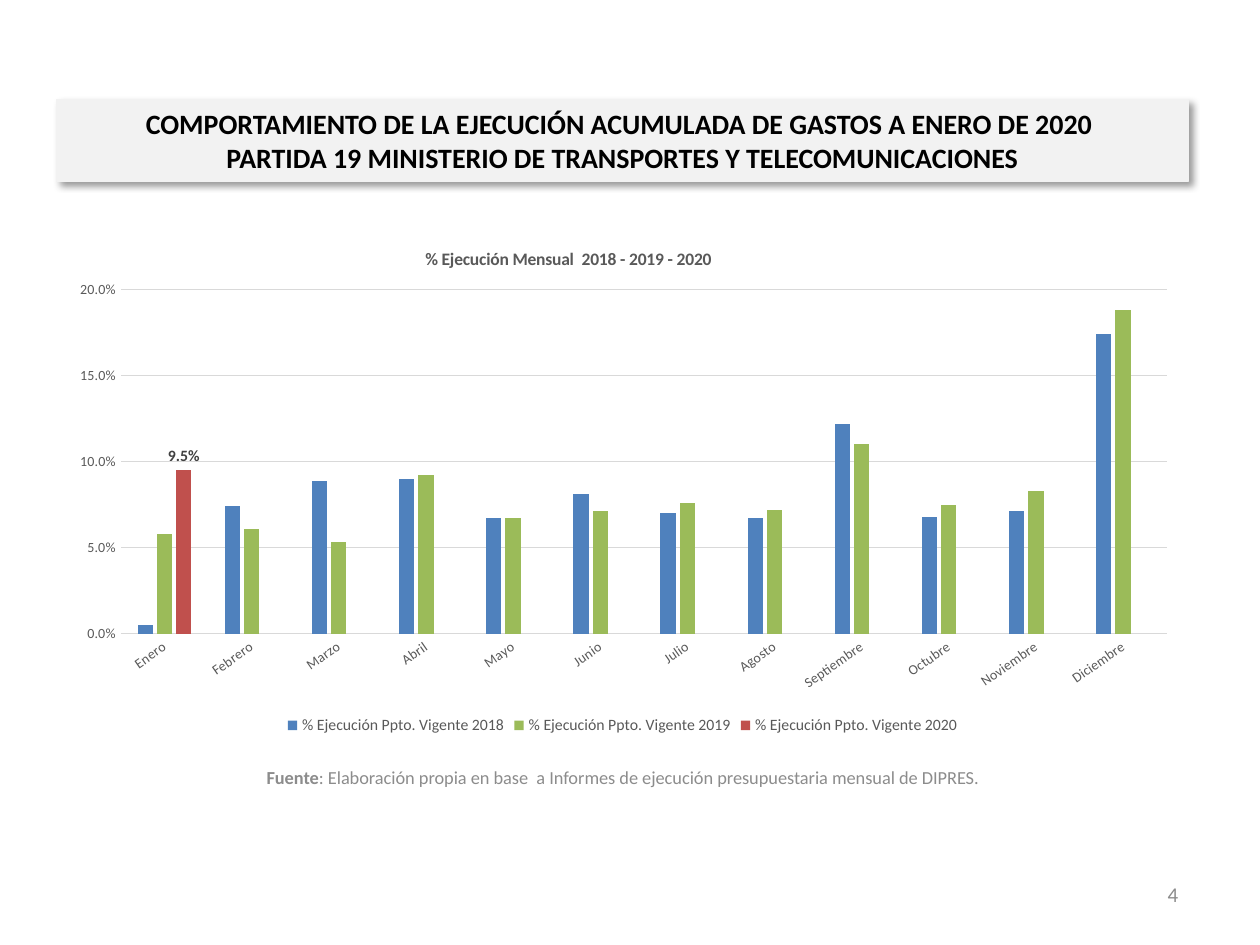
from lxml import etree
from pptx import Presentation
from pptx.chart.data import CategoryChartData
from pptx.dml.color import RGBColor
from pptx.enum.chart import XL_CHART_TYPE, XL_LABEL_POSITION, XL_LEGEND_POSITION, XL_TICK_MARK
from pptx.enum.text import MSO_ANCHOR, PP_ALIGN
from pptx.oxml import parse_xml
from pptx.util import Inches, Pt

COLUMNS = XL_CHART_TYPE.COLUMN_CLUSTERED
OUTSIDE_END = XL_LABEL_POSITION.OUTSIDE_END
BOTTOM = XL_LEGEND_POSITION.BOTTOM
NO_TICK = XL_TICK_MARK.NONE
MIDDLE = MSO_ANCHOR.MIDDLE
CENTER, RIGHT = PP_ALIGN.CENTER, PP_ALIGN.RIGHT

WIDTH, HEIGHT = 10, 7.5
MARGIN, CONTENT_WIDTH, CHART_HEIGHT = 0.45, 8.98, 4.09
FONT = "Calibri"
BLACK, DARK, GRAY, RULE, PANEL = "000000", "595959", "8C8C8C", "D9D9D9", "F2F2F2"
PERCENT = "0.0%"
LABEL_ANGLE = -35
DRAWING = "http://schemas.openxmlformats.org/drawingml/2006/main"
CHART = "http://schemas.openxmlformats.org/drawingml/2006/chart"

MONTHS = ["Enero", "Febrero", "Marzo", "Abril", "Mayo", "Junio", "Julio", "Agosto",
          "Septiembre", "Octubre", "Noviembre", "Diciembre"]
YEARS = {
    2018: ("4F81BD", [0.005, 0.074, 0.089, 0.09, 0.067, 0.081,
                      0.07, 0.067, 0.122, 0.068, 0.071, 0.174]),
    2019: ("9BBB59", [0.058, 0.061, 0.053, 0.092, 0.067, 0.071,
                      0.076, 0.072, 0.11, 0.075, 0.083, 0.188]),
    2020: ("C0504D", [0.095] + [None] * 11),
}


def rgb(value):
    """Turn a hex string into a colour."""
    return RGBColor.from_string(value)


def style_font(font, size, color, bold=False):
    """Set face, size, colour and weight of a font."""
    font.name, font.size, font.bold = FONT, Pt(size), bold
    font.color.rgb = rgb(color)


def style_line(line, color):
    """Give a line its colour and the common thin width."""
    line.color.rgb = rgb(color)
    line.width = Pt(0.75)


def add_span(para, text, size, color, bold=False):
    """Append a formatted run to a paragraph."""
    span = para.add_run()
    span.text = text
    style_font(span.font, size, color, bold)


def place(shape, left, top, width, height):
    """Move and size a shape in inches."""
    shape.left, shape.top = Inches(left), Inches(top)
    shape.width, shape.height = Inches(width), Inches(height)


def add_shadow(shape):
    """Cast a soft black shadow to the lower right."""
    shape.element.spPr.append(parse_xml(
        f'<a:effectLst xmlns:a="{DRAWING}"><a:outerShdw blurRad="{Pt(4)}" dist="{Pt(3)}" '
        'dir="2700000" algn="tl" rotWithShape="0"><a:srgbClr val="000000">'
        '<a:alpha val="40000"/></a:srgbClr></a:outerShdw></a:effectLst>'))


def set_title(page, lines):
    """Format the title placeholder as a shaded banner."""
    title = page.shapes.title
    place(title, MARGIN, 0.79, CONTENT_WIDTH, 0.65)
    title.fill.solid()
    title.fill.fore_color.rgb = rgb(PANEL)
    style_line(title.line, PANEL)
    add_shadow(title)
    frame = title.text_frame
    frame.word_wrap, frame.vertical_anchor = True, MIDDLE
    para = frame.paragraphs[0]
    para.alignment = CENTER
    for index, line in enumerate(lines):
        if index:
            para.add_line_break()
        add_span(para, line, 16, BLACK, bold=True)


def add_text(page, area, spans, size, align):
    """Add a gray text box from pairs of text and weight."""
    box = page.shapes.add_textbox(0, 0, 0, 0)
    place(box, *area)
    frame = box.text_frame
    frame.word_wrap, frame.vertical_anchor = True, MIDDLE
    para = frame.paragraphs[0]
    para.alignment = align
    for text, bold in spans:
        add_span(para, text, size, GRAY, bold)


def set_layout(chart, part, modes, left, top, width=None, height=None):
    """Fix a chart part at inches from the corner of the chart."""
    element = chart.element.find(f".//{{{CHART}}}{part}")
    layout = element.find(f"{{{CHART}}}layout")
    if layout is None:
        layout = etree.Element(f"{{{CHART}}}layout")
        element.insert(1 if part == "title" else 0, layout)
    values = {**modes, "xMode": "edge", "yMode": "edge",
              "x": left / CONTENT_WIDTH, "y": top / CHART_HEIGHT}
    if width:
        values.update(w=width / CONTENT_WIDTH, h=height / CHART_HEIGHT)
    manual = etree.SubElement(layout, f"{{{CHART}}}manualLayout")
    for name, value in values.items():
        etree.SubElement(manual, f"{{{CHART}}}{name}").set("val", str(value))


def format_axes(chart):
    """Format the slanted month axis and the percent axis."""
    months, shares = chart.category_axis, chart.value_axis
    for axis in (months, shares):
        axis.major_tick_mark = axis.minor_tick_mark = NO_TICK
        style_font(axis.tick_labels.font, 8, DARK)
    style_line(months.format.line, RULE)
    body = months._element.find(f"{{{CHART}}}txPr/{{{DRAWING}}}bodyPr")
    body.set("rot", str(LABEL_ANGLE * 60000))
    body.set("vert", "horz")
    shares.format.line.fill.background()
    style_line(shares.major_gridlines.format.line, RULE)
    shares.minimum_scale, shares.maximum_scale, shares.major_unit = 0, 0.2, 0.05
    shares.tick_labels.number_format = PERCENT
    shares.tick_labels.number_format_is_linked = False


def format_series(plot):
    """Colour the columns and label the latest year."""
    plot.gap_width, plot.overlap, plot.vary_by_categories = 219, -27, False
    for series, (color, _) in zip(plot.series, YEARS.values()):
        series.format.fill.solid()
        series.format.fill.fore_color.rgb = rgb(color)
        series.invert_if_negative = False
    labels = plot.series[-1].data_labels
    labels.show_value, labels.position = True, OUTSIDE_END
    labels.number_format, labels.number_format_is_linked = PERCENT, False
    style_font(labels.font, 9, "404040", bold=True)


def add_execution_chart(page):
    """Add the monthly execution chart."""
    data = CategoryChartData(number_format=PERCENT)
    data.categories = MONTHS
    for year, (_, values) in YEARS.items():
        data.add_series(f"% Ejecución Ppto. Vigente {year}", values)
    area = map(Inches, (MARGIN, 1.78, CONTENT_WIDTH, CHART_HEIGHT))
    chart = page.shapes.add_chart(COLUMNS, *area, data).chart
    style_font(chart.font, 10, BLACK)
    para = chart.chart_title.text_frame.paragraphs[0]
    add_span(para, "% Ejecución Mensual  2018 - 2019 - 2020", 10, DARK, bold=True)
    chart.chart_title.include_in_layout = False
    chart.has_legend = True
    chart.legend.position, chart.legend.include_in_layout = BOTTOM, False
    style_font(chart.legend.font, 9, DARK)
    format_axes(chart)
    format_series(chart.plots[0])
    set_layout(chart, "title", {}, 2.9, 0.16)
    set_layout(chart, "plotArea", {"layoutTarget": "inner"}, 0.51, 0.52, 8.3, 2.73)


def main():
    """Build and save the slide."""
    deck = Presentation()
    deck.slide_width, deck.slide_height = Inches(WIDTH), Inches(HEIGHT)
    page = deck.slides.add_slide(deck.slide_layouts[5])
    set_title(page, ["COMPORTAMIENTO DE LA EJECUCIÓN ACUMULADA DE GASTOS A ENERO DE 2020 ",
                     "PARTIDA 19 MINISTERIO DE TRANSPORTES Y TELECOMUNICACIONES"])
    add_execution_chart(page)
    source = ": Elaboración propia en base  a Informes de ejecución presupuestaria mensual de DIPRES."
    add_text(page, (0.89, 6.01, 8.11, 0.32), [("Fuente", True), (source, False)], 10.5, CENTER)
    add_text(page, (7.12, 6.9, 2.33, 0.4), [("4", False)], 12, RIGHT)
    deck.save("out.pptx")


if __name__ == "__main__":
    main()
